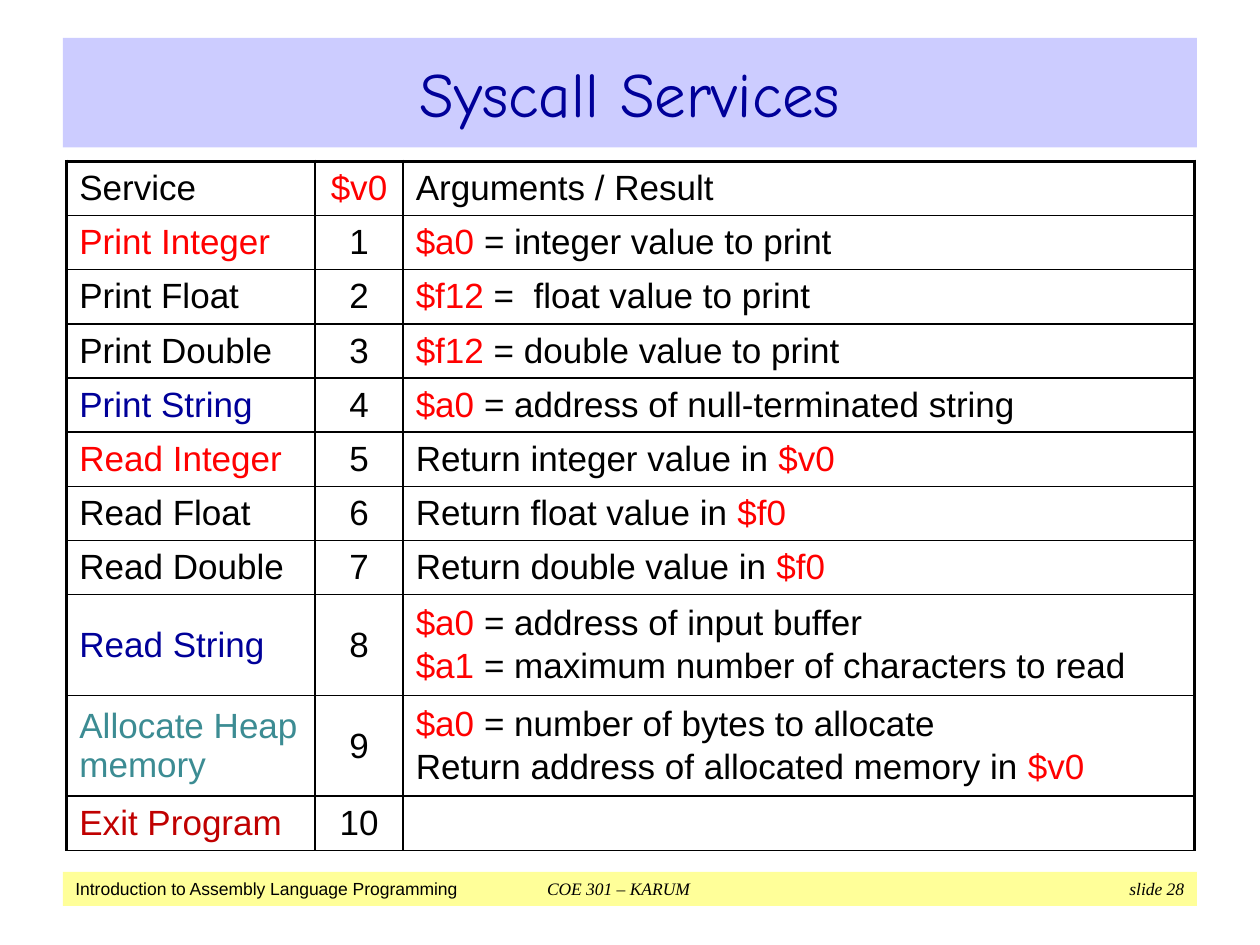
from itertools import groupby

from lxml.etree import SubElement
from pptx import Presentation
from pptx.dml.color import RGBColor
from pptx.enum.shapes import MSO_SHAPE
from pptx.enum.text import MSO_ANCHOR, PP_ALIGN
from pptx.oxml.ns import qn
from pptx.util import Inches, Pt

BLACK = RGBColor(0x00, 0x00, 0x00)
WHITE = RGBColor(0xFF, 0xFF, 0xFF)
RED = RGBColor(0xFF, 0x00, 0x00)
DARK_RED = RGBColor(0xC0, 0x00, 0x00)
NAVY = RGBColor(0x00, 0x00, 0x99)
TEAL = RGBColor(0x3C, 0x8C, 0x93)
LAVENDER = RGBColor(0xCC, 0xCC, 0xFF)
YELLOW = RGBColor(0xFF, 0xFF, 0x99)

MARGIN, BAND_W = 0.5, 9
COLUMNS = (1.97, 0.7, 6.28)
ROW_H, TALL_ROW_H = 0.43, 0.8
THIN, THICK = 1, 2.25

SERVICES = [
    ("Service", BLACK, "$v0", ["Arguments / Result"]),
    ("Print Integer", RED, "1", ["$a0 = integer value to print"]),
    ("Print Float", BLACK, "2", ["$f12 =  float value to print"]),
    ("Print Double", BLACK, "3", ["$f12 = double value to print"]),
    ("Print String", NAVY, "4", ["$a0 = address of null-terminated string"]),
    ("Read Integer", RED, "5", ["Return integer value in $v0"]),
    ("Read Float", BLACK, "6", ["Return float value in $f0"]),
    ("Read Double", BLACK, "7", ["Return double value in $f0"]),
    ("Read String", NAVY, "8", ["$a0 = address of input buffer",
                                "$a1 = maximum number of characters to read"]),
    ("Allocate Heap memory", TEAL, "9", ["$a0 = number of bytes to allocate",
                                         "Return address of allocated memory in $v0"]),
    ("Exit Program", DARK_RED, "10", []),
]


def set_font(font, name, size, color):
    """Set typeface, size and colour of a font."""
    font.name, font.size = name, Pt(size)
    font.color.rgb = color


def add_band(s, top, height, fill):
    """Add a full-width filled band and return its first paragraph."""
    sp = s.shapes.add_shape(MSO_SHAPE.RECTANGLE, Inches(MARGIN), Inches(top),
                            Inches(BAND_W), Inches(height))
    sp.shadow.inherit = False
    sp.fill.solid()
    sp.fill.fore_color.rgb = fill
    sp.line.fill.background()
    tf = sp.text_frame
    tf.word_wrap = True
    tf.vertical_anchor = MSO_ANCHOR.MIDDLE
    tf.margin_top = tf.margin_bottom = 0
    return tf.paragraphs[0]


def add_title(s, text):
    """Add the title band."""
    p = add_band(s, 0.3, 0.87, LAVENDER)
    p.alignment = PP_ALIGN.CENTER
    p.add_run().text = text
    set_font(p.font, "Comic Neue", 36, NAVY)


def add_footer(s, chapter, course, number):
    """Add the footer band with a centred and a right-aligned tab stop."""
    p = add_band(s, 6.92, 0.27, YELLOW)
    p.alignment = PP_ALIGN.LEFT
    tabs = SubElement(p._p.get_or_add_pPr(), qn("a:tabLst"))
    for pos, align in ((4.31, "ctr"), (8.8, "r")):
        SubElement(tabs, qn("a:tab"), pos=str(Inches(pos)), algn=align)
    for text, name in ((chapter, "Arial"), (f"\t{course}\t{number}", "Times New Roman")):
        r = p.add_run()
        r.text = text
        set_font(r.font, name, 10, BLACK)
        r.font.italic = name != "Arial"


def fill_paragraph(p, text, color, align):
    """Write one line of a cell, with register names in red."""
    p.alignment = align
    set_font(p.font, "Arial", 20, color)
    words = text.split(" ")
    words = [w + " " for w in words[:-1]] + words[-1:]
    for is_register, group in groupby(words, lambda w: w.startswith("$")):
        r = p.add_run()
        r.text = "".join(group)
        if is_register:
            r.font.color.rgb = RED


def set_borders(cell, **widths):
    """Draw black cell borders, given as side=points."""
    tcPr = cell._tc.get_or_add_tcPr()
    for i, (side, width) in enumerate(widths.items()):
        ln = tcPr.makeelement(qn(f"a:ln{side}"), {"w": str(Pt(width))})
        SubElement(SubElement(ln, qn("a:solidFill")), qn("a:srgbClr"), val=str(BLACK))
        tcPr.insert(i, ln)


def fill_cell(cell, lines, color=BLACK, align=PP_ALIGN.LEFT):
    """Fill a cell with lines of text on white."""
    cell.fill.solid()
    cell.fill.fore_color.rgb = WHITE
    cell.vertical_anchor = MSO_ANCHOR.MIDDLE
    tf = cell.text_frame
    for i, line in enumerate(lines):
        p = tf.add_paragraph() if i else tf.paragraphs[0]
        fill_paragraph(p, line, color, align)
        p.space_before = Pt(2 if i else 0)


def add_services(s):
    """Add the table of services."""
    heights = [TALL_ROW_H if name in ("Read String", "Allocate Heap memory") else ROW_H
               for name, *_ in SERVICES]
    table = s.shapes.add_table(len(SERVICES), len(COLUMNS), Inches(0.53), Inches(1.28),
                               Inches(sum(COLUMNS)), Inches(sum(heights))).table
    table.first_row = table.horz_banding = False
    for column, width in zip(table.columns, COLUMNS):
        column.width = Inches(width)
    for i, (name, color, code, lines) in enumerate(SERVICES):
        table.rows[i].height = Inches(heights[i])
        service, number, result = table.rows[i].cells
        fill_cell(service, [name], color)
        fill_cell(number, [code], align=PP_ALIGN.CENTER)
        fill_cell(result, lines)
        top = THIN if i else THICK
        set_borders(service, L=THICK, R=THIN, T=top, B=THIN)
        set_borders(number, L=THIN, R=THIN, T=top, B=THIN)
        set_borders(result, L=THIN, R=THICK, T=top, B=THIN)


def main():
    """Build the slide and save it."""
    prs = Presentation()
    prs.slide_width, prs.slide_height = Inches(10), Inches(7.5)
    s = prs.slides.add_slide(prs.slide_layouts[6])
    add_footer(s, "Introduction to Assembly Language Programming",
               "COE 301 – KARUM", "slide 28")
    add_title(s, "Syscall Services")
    add_services(s)
    prs.save("out.pptx")


if __name__ == "__main__":
    main()
